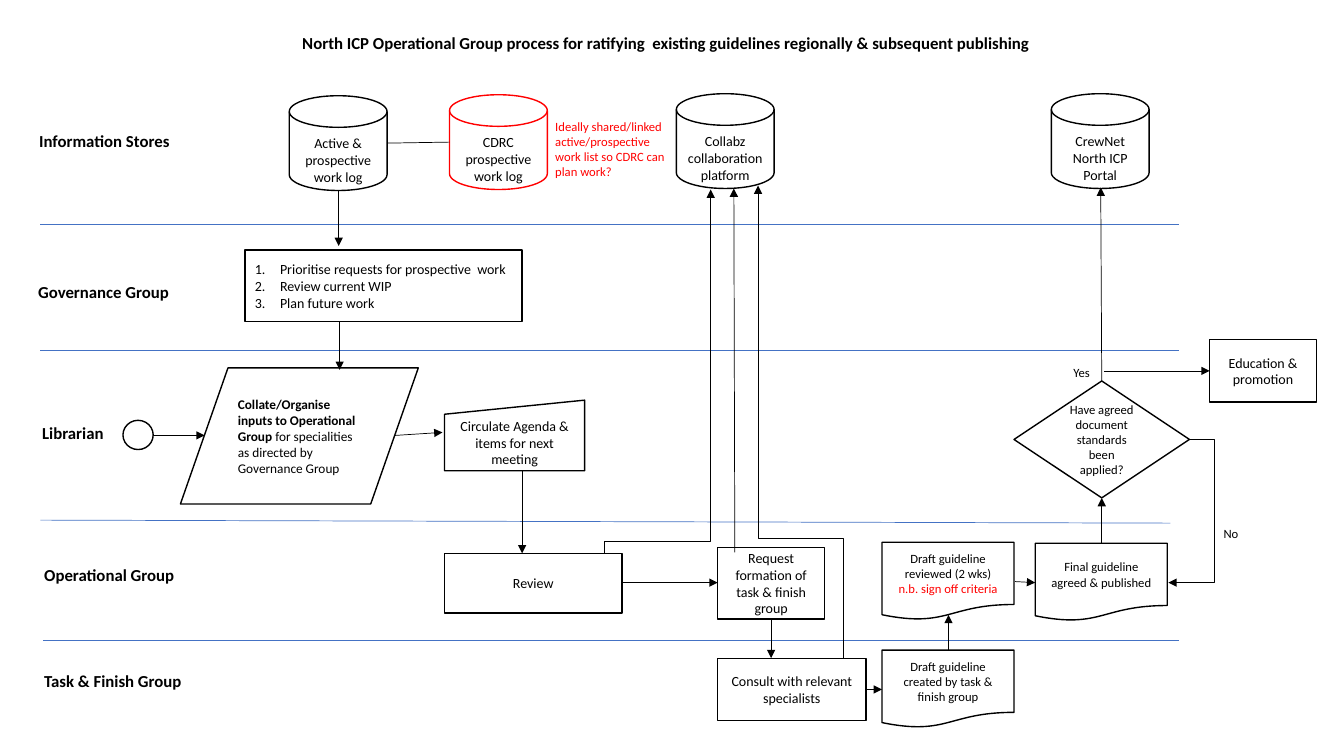
"""Swimlane flowchart of how existing guidelines are ratified and published."""
from lxml import etree
from pptx import Presentation
from pptx.dml.color import RGBColor
from pptx.enum.shapes import MSO_CONNECTOR, MSO_SHAPE
from pptx.enum.text import MSO_ANCHOR, PP_ALIGN
from pptx.oxml.ns import qn
from pptx.util import Inches, Pt

BLACK = RGBColor(0, 0, 0)
WHITE = RGBColor(255, 255, 255)
RED = RGBColor(255, 0, 0)
BLUE = RGBColor(0x44, 0x72, 0xC4)
LEFT, CENTER, RIGHT = PP_ALIGN.LEFT, PP_ALIGN.CENTER, PP_ALIGN.RIGHT
TOP, MIDDLE, BOTTOM = MSO_ANCHOR.TOP, MSO_ANCHOR.MIDDLE, MSO_ANCHOR.BOTTOM
STRAIGHT, ELBOW = MSO_CONNECTOR.STRAIGHT, MSO_CONNECTOR.ELBOW
RECT = MSO_SHAPE.RECTANGLE
DISK = MSO_SHAPE.FLOWCHART_MAGNETIC_DISK
DATA = MSO_SHAPE.FLOWCHART_DATA
MANUAL = MSO_SHAPE.FLOWCHART_MANUAL_INPUT
DECISION = MSO_SHAPE.FLOWCHART_DECISION
DOCUMENT = MSO_SHAPE.FLOWCHART_DOCUMENT
CIRCLE = MSO_SHAPE.FLOWCHART_CONNECTOR
CELL = Inches(0.1)


def write(shape, paragraphs, size, align, anchor, color=BLACK, bold=False):
    tf = shape.text_frame
    tf.word_wrap = True
    tf.vertical_anchor = anchor
    for i, runs in enumerate(paragraphs):
        p = tf.add_paragraph() if i else tf.paragraphs[0]
        p.alignment = align
        for text in runs:
            p.add_run().text = text
        p.font.name = "Calibri"
        p.font.size = Pt(size)
        p.font.bold = bold
        p.font.color.rgb = color


def connect(kind, ends, color=BLACK, arrow=True):
    c = s.shapes.add_connector(kind, *[int(v * CELL) for v in ends])
    c.line.color.rgb = color
    c.line.width = Pt(0.5)
    if arrow:
        etree.SubElement(c.line._get_or_add_ln(), qn("a:tailEnd"), type="triangle")
    etree.SubElement(c._element.spPr, qn("a:effectLst"))
    return c


prs = Presentation()
prs.slide_width, prs.slide_height = int(133.33 * CELL), 75 * CELL
s = prs.slides.add_slide(prs.slide_layouts[6])

LANES = [
    ("Information Stores", 2.9, 12.5), ("Governance Group", 2.8, 27.5),
    ("Librarian", 3.2, 41.4), ("Operational Group", 3.4, 55.5),
    ("Task & Finish Group", 3.4, 66.1),
]
texts = [(name, x, y, 17.6, 3, 12, LEFT, TOP, BLACK, True) for name, x, y in LANES]
texts += [
    ("North ICP Operational Group process for ratifying  existing guidelines "
     "regionally & subsequent publishing",
     16.1, 1.4, 100, 4.3, 12, CENTER, BOTTOM, BLACK, True),
    ("Ideally shared/linked active/prospective work list so CDRC can plan work?",
     54.1, 11.3, 12.8, 7.1, 9, LEFT, TOP, RED, False),
    ("Yes", 104.7, 35.7, 4.4, 2.5, 9, RIGHT, TOP, BLACK, False),
    ("No", 120.4, 51.7, 4.4, 2.5, 9, LEFT, TOP, BLACK, False),
]
for text, x, y, w, h, size, align, anchor, color, bold in texts:
    tb = s.shapes.add_textbox(*[int(v * CELL) for v in (x, y, w, h)])
    write(tb, [[text]], size, align, anchor, color, bold)

for ends in [(4, 22.3, 117, 22.3), (4, 34.8, 117, 34.8),
             (4, 51.6, 116.1, 51.9), (4.3, 63.5, 117, 63.5)]:
    connect(STRAIGHT, ends, BLUE, arrow=False)

STEPS = {
    "active log": (DISK, 28.7, 9.5, 9.7, 9.4, 10, [["Active & prospective work log"]]),
    "cdrc log": (DISK, 44.6, 9.4, 9.7, 9.4, 10, [["CDRC prospective work log"]]),
    "platform": (DISK, 67.1, 9.3, 9.7, 9.4, 10, [["Collabz collaboration platform"]]),
    "portal": (DISK, 104.3, 9.3, 9.7, 9.4, 10, [["CrewNet North ICP Portal"]]),
    "priorities": (RECT, 24.3, 24.8, 27.5, 7.1, 10,
                   [["Prioritise requests for prospective  work"],
                    ["Review current WIP"], ["Plan future work"]]),
    "start": (CIRCLE, 12.2, 41.7, 3, 2.9, 10, []),
    "collate": (DATA, 17.9, 36.5, 23.6, 13.5, 9.5,
                [["Collate/Organise inputs to Operational Group ",
                  "for specialities as directed by Governance Group"]]),
    "circulate": (MANUAL, 44.1, 39.7, 13.9, 7, 10,
                  [["Circulate Agenda & items for next meeting"]]),
    "education": (RECT, 120, 33.7, 10.6, 6.2, 10, [["Education & promotion"]]),
    "standards": (DECISION, 100.6, 37.8, 17.4, 11.6, 9,
                  [["Have agreed document standards been applied?"]]),
    "review": (RECT, 44.1, 54.9, 17.6, 5.9, 10, [["Review"]]),
    "request": (RECT, 71.2, 54.3, 10.6, 7.1, 10,
                [["Request formation of task & finish group"]]),
    "consult": (RECT, 71.2, 65.3, 14.7, 6.2, 10,
                [["Consult with relevant specialists"]]),
    "created": (DOCUMENT, 87.5, 64.5, 13.1, 7.7, 9,
                [["Draft guideline created by task & finish group"]]),
    "reviewed": (DOCUMENT, 87.5, 53.8, 13.1, 7.7, 9,
                 [["Draft guideline reviewed (2 wks)"], ["n.b. sign off criteria"]]),
    "final": (DOCUMENT, 102.7, 53.9, 13.1, 7.7, 9,
              [["Final guideline agreed & published"]]),
}
steps = {}
for name, (kind, x, y, w, h, size, paragraphs) in STEPS.items():
    sp = s.shapes.add_shape(kind, *[int(v * CELL) for v in (x, y, w, h)])
    sp.shadow.inherit = False
    sp.fill.solid()
    sp.fill.fore_color.rgb = WHITE
    sp.line.color.rgb = RED if name == "cdrc log" else BLACK
    sp.line.width = Pt(1)
    if kind == DISK:
        sp.text_frame.margin_top = Inches(0.22)
    align = LEFT if name in ("priorities", "collate") else CENTER
    if name == "priorities":
        sp.text_frame.paragraphs[0].alignment = LEFT
    write(sp, paragraphs, size, align, MIDDLE)
    steps[name] = sp

for p in steps["priorities"].text_frame.paragraphs:
    pPr = p._p.get_or_add_pPr()
    pPr.set("marL", str(Inches(0.25)))
    pPr.set("indent", str(-Inches(0.25)))
    number = etree.Element(qn("a:buAutoNum"), type="arabicPeriod")
    pPr.insert(0, number)
steps["collate"].text_frame.paragraphs[0].runs[0].font.bold = True
steps["reviewed"].text_frame.paragraphs[1].font.color.rgb = RED

ARROWS = [
    (33.6, 18.9, 33.6, 24.4), (33.7, 31.9, 33.7, 36.7), (15.2, 43.2, 20.3, 43.2),
    (39.2, 43.2, 43.9, 42.9), (51.8, 46.7, 51.8, 54.9), (61.8, 57.8, 71.2, 57.8),
    (72.9, 54.8, 72.8, 18.7), (76.5, 61.5, 76.5, 65.3), (86, 68.4, 87.5, 68.4),
    (94.1, 64.5, 94.1, 61), (100.7, 57.7, 102.7, 57.8), (109.3, 53.9, 109.3, 49.4),
    (109.3, 37.8, 109.2, 18.6), (109.5, 36.8, 120, 36.8),
]
for ends in ARROWS:
    connect(STRAIGHT, ends)
connect(STRAIGHT, (38.5, 14.2, 44.6, 14.1), arrow=False)

ELBOWS = [
    ((118, 43.6, 115.9, 57.8), 0, -118500),
    ((83.3, 42.1, 47.2, 31.6), 90, 3400),
    ((56, 46.1, 102.9, 37.6), 270, 25400),
]
for ends, turn, bend in ELBOWS:
    c = connect(ELBOW, ends)
    spPr = c._element.spPr
    spPr.find(qn("a:xfrm")).set("rot", str(turn * 60000))
    guides = spPr.find(qn("a:prstGeom")).find(qn("a:avLst"))
    etree.SubElement(guides, qn("a:gd"), name="adj1", fmla=f"val {bend}")

prs.save("out.pptx")
